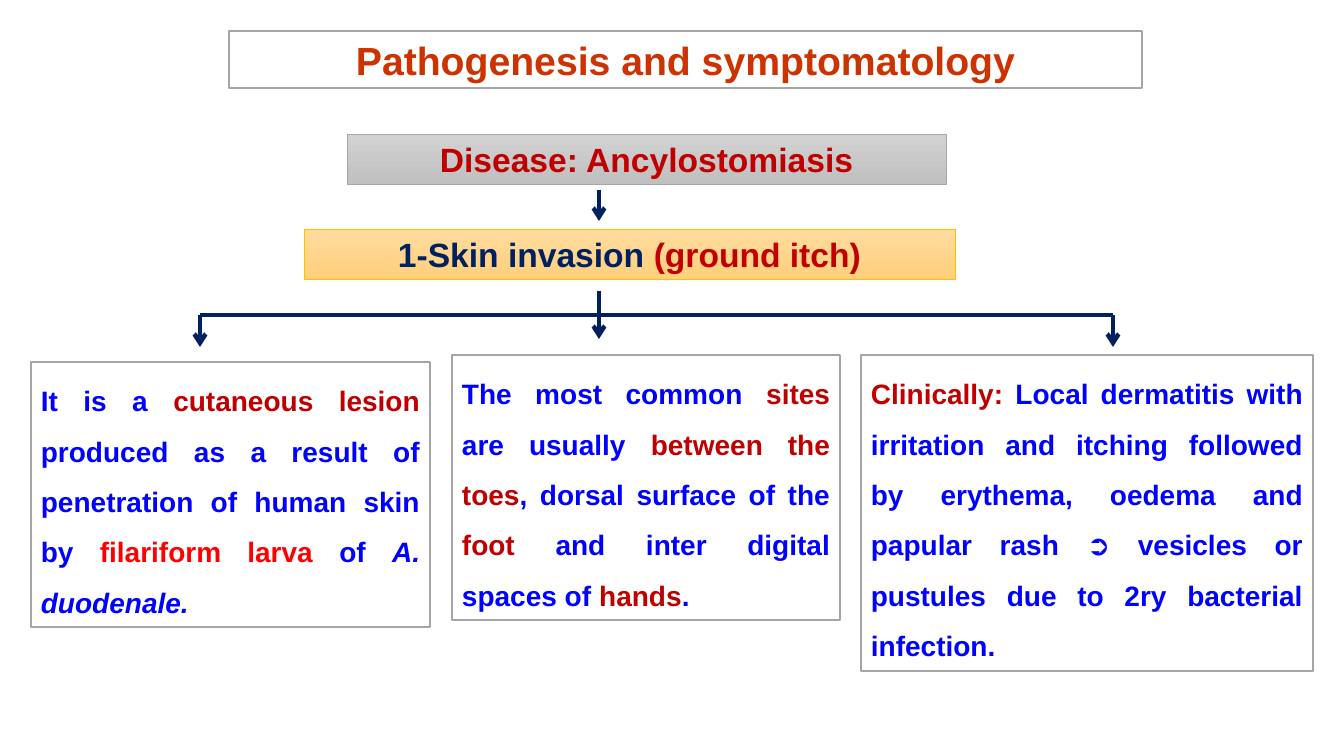
import pptx
import pptx.dml.color
import pptx.enum.shapes
import pptx.enum.text
import pptx.oxml.xmlchemy
import pptx.util

PX = 12192000 / 1344
SLIDE = (1344, 756)
FONT = "Arial"
BLUE, RED, NAVY, GREY = "0000FF", "C00000", "002060", "A5A5A5"
CENTER = pptx.enum.text.PP_ALIGN.CENTER
JUSTIFY = pptx.enum.text.PP_ALIGN.JUSTIFY

# Content: place, fill colours, outline, text size, spans
HEADINGS = [
    ((229, 31, 913, 57), ["FFFFFF"], (GREY, 1), 28,
     [("Pathogenesis and symptomatology", "CC3300")]),
    ((347, 134, 599, 50), ["D2D2D2", "C0C0C0"], (GREY, 0.5), 24,
     [("Disease: Ancylostomiasis", RED)]),
    ((304, 229, 651, 50), ["FFDB9E", "FFD07C"], ("FFC000", 0.5), 24,
     [("1-Skin invasion ", NAVY), ("(ground itch)", RED)]),
]
CARDS = [
    ((31, 362, 399, 265), [
        ("It is a ", BLUE), ("cutaneous lesion", RED),
        (" produced as a result of penetration of human skin by ", BLUE),
        ("filariform larva ", "FF0000"), ("of ", BLUE),
        ("A. duodenale.", BLUE, True)]),
    ((452, 355, 388, 265), [
        ("The most common ", BLUE), ("sites", RED), (" are usually ", BLUE),
        ("between the toes", RED), (", dorsal surface of the ", BLUE),
        ("foot", RED), (" and inter digital spaces of ", BLUE),
        ("hands", RED), (".", BLUE)]),
    ((861, 355, 452, 316), [
        ("Clinically:", RED),
        (" Local dermatitis with irritation and itching followed by erythema, "
         "oedema and papular rash ➲ vesicles or pustules due to 2ry bacterial "
         "infection.", BLUE)]),
]

# Branching lines: start, end, arrowhead
LEFT, STEM, RIGHT, BRANCH = 200, 599, 1113, 315
LINES = [
    ((STEM, 190), (STEM, 221), True),
    ((STEM, 291), (STEM, BRANCH), False),
    ((STEM, BRANCH), (LEFT, BRANCH), False),
    ((STEM, BRANCH), (RIGHT, BRANCH), False),
    ((LEFT, BRANCH), (LEFT, 347), True),
    ((STEM, 307), (STEM, 339), True),
    ((RIGHT, BRANCH), (RIGHT, 347), True),
]


def emu(*lengths):
    return [round(length * PX) for length in lengths]


def color(value):
    return pptx.dml.color.RGBColor.from_string(value)


def apply(target, values):
    for name, value in values.items():
        setattr(target, name, value)


def paint(fill, colors):
    if len(colors) == 1:
        fill.solid()
        fill.fore_color.rgb = color(colors[0])
        return
    fill.gradient()
    fill.gradient_angle = 270
    for stop, value, position in zip(fill.gradient_stops, colors, (0, 1)):
        stop.color.rgb = color(value)
        stop.position = position


def add_box(page, place, fills, outline, size, spans, align, spacing):
    box = page.shapes.add_shape(
        pptx.enum.shapes.MSO_SHAPE.RECTANGLE, *emu(*place))
    box.shadow.inherit = False
    paint(box.fill, fills)
    box.line.color.rgb = color(outline[0])
    box.line.width = pptx.util.Pt(outline[1])
    apply(box.text_frame, {
        "word_wrap": True,
        "auto_size": pptx.enum.text.MSO_AUTO_SIZE.SHAPE_TO_FIT_TEXT,
        "vertical_anchor": pptx.enum.text.MSO_ANCHOR.TOP})
    para = box.text_frame.paragraphs[0]
    apply(para, {"alignment": align, "line_spacing": spacing})
    for text, value, *italic in spans:
        span = para.add_run()
        span.text = text
        apply(span.font, {"name": FONT, "size": pptx.util.Pt(size),
                          "bold": True, "italic": bool(italic)})
        span.font.color.rgb = color(value)


def add_line(page, start, end, arrow):
    line = page.shapes.add_connector(
        pptx.enum.shapes.MSO_CONNECTOR.STRAIGHT, *emu(*start, *end))
    line.line.color.rgb = color(NAVY)
    line.line.width = pptx.util.Pt(3)
    properties = line._element.spPr
    if arrow:
        tail = pptx.oxml.xmlchemy.OxmlElement("a:tailEnd")
        tail.set("type", "arrow")
        properties.get_or_add_ln().append(tail)
    properties.append(pptx.oxml.xmlchemy.OxmlElement("a:effectLst"))


def main():
    deck = pptx.Presentation()
    deck.slide_width, deck.slide_height = emu(*SLIDE)
    page = deck.slides.add_slide(deck.slide_layouts[6])

    # Title and headings
    for place, fills, outline, size, spans in HEADINGS:
        add_box(page, place, fills, outline, size, spans, CENTER, 1.0)

    # Arrows
    for start, end, arrow in LINES:
        add_line(page, start, end, arrow)

    # Three explanations
    for place, spans in CARDS:
        add_box(page, place, ["FFFFFF"], (GREY, 1), 20, spans, JUSTIFY, 1.5)

    deck.save("out.pptx")


if __name__ == "__main__":
    main()
